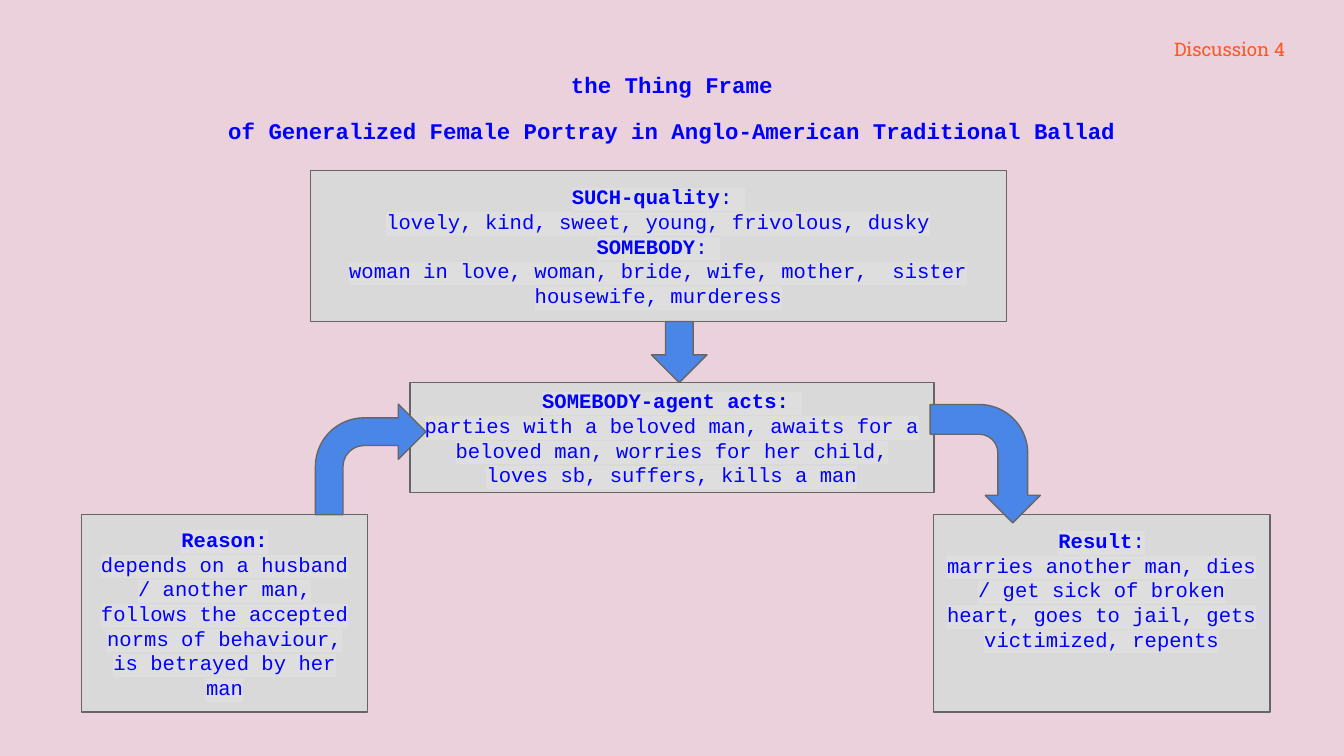
from lxml import etree
from pptx import Presentation
from pptx.dml.color import RGBColor
from pptx.enum.shapes import MSO_SHAPE
from pptx.enum.text import MSO_ANCHOR, MSO_AUTO_SIZE, PP_ALIGN
from pptx.oxml.ns import qn
from pptx.util import Pt

PINK = RGBColor(0xEA, 0xD1, 0xDC)
ORANGE = RGBColor(0xFF, 0x57, 0x22)
BLUE = RGBColor(0x00, 0x00, 0xFF)
BOX_GREY = RGBColor(0xD9, 0xD9, 0xD9)
TEXT_GREY = RGBColor(0xDE, 0xDE, 0xDE)
LINE_GREY = RGBColor(0x66, 0x66, 0x66)
ARROW_BLUE = RGBColor(0x4A, 0x86, 0xE8)

RECTANGLE = MSO_SHAPE.RECTANGLE
DOWN_ARROW = MSO_SHAPE.DOWN_ARROW
BENT_ARROW = MSO_SHAPE.BENT_ARROW
TOP, MIDDLE = MSO_ANCHOR.TOP, MSO_ANCHOR.MIDDLE
CENTER, RIGHT = PP_ALIGN.CENTER, PP_ALIGN.RIGHT
NO_AUTOFIT = MSO_AUTO_SIZE.NONE

INSET = 7.2

# Each box is left, top, width, height in points.
TITLE_BOX = (24.5, 13, 671, 26.6)
HEADING_BOX = (28, 31, 671, 356)
QUALITY_BOX = (166.3, 91.3, 372.8, 81)
AGENT_BOX = (219.6, 205, 280.8, 59)
REASON_BOX = (43.7, 275.7, 153.2, 105.7)
RESULT_BOX = (500.1, 275.7, 180.2, 105.7)
REASON_ARROW_BOX = (169, 216.5, 59.2, 59.2)
RESULT_ARROW_BOX = (496.1, 218.9, 63.4, 59)
DOWN_ARROW_WIDTH = 29.7

HEADING = [
    "the Thing Frame ",
    "of Generalized Female Portray in Anglo-American Traditional Ballad ",
]

# Each paragraph is a bold part followed by a plain part.
QUALITY = [
    ("SUCH-quality", ": "),
    ("", "lovely, kind, sweet, young, frivolous, dusky"),
    ("SOMEBODY", ": "),
    ("", "woman in love, woman, bride, wife, mother,  sister"),
    ("", "housewife, murderess"),
]
AGENT = [
    ("SOMEBODY-agent acts: ", ""),
    ("", "parties with a beloved man, awaits for a beloved man, "
         "worries for her child, loves sb, suffers, kills a man"),
]
REASON = [
    ("Reason:", ""),
    ("", "depends on a husband / another man,"),
    ("", "follows the accepted norms of behaviour, is betrayed by her man"),
]
RESULT = [
    ("Result", ":"),
    ("", "marries another man, dies / get sick of broken heart, "
         "goes to jail, gets victimized, repents"),
]


def format_span(span, size, name, colour, bold=False, highlight=None):
    span.font.size = Pt(size)
    span.font.name = name
    span.font.bold = bold
    span.font.color.rgb = colour
    if highlight is not None:
        fill = span.font._element.find(qn("a:solidFill"))
        mark = etree.Element(qn("a:highlight"))
        etree.SubElement(mark, qn("a:srgbClr")).set("val", str(highlight))
        fill.addnext(mark)


def prepare_frame(shape, anchor):
    frame = shape.text_frame
    frame.word_wrap = True
    frame.auto_size = NO_AUTOFIT
    frame.vertical_anchor = anchor
    frame.margin_left = frame.margin_right = Pt(INSET)
    frame.margin_top = frame.margin_bottom = Pt(INSET)
    return frame


def place(shape, box):
    shape.left, shape.top, shape.width, shape.height = map(Pt, box)


def remove_bullet(para):
    properties = para._p.get_or_add_pPr()
    properties.set("marL", "0")
    properties.set("indent", "0")
    etree.SubElement(properties, qn("a:buNone"))


def fill_title(title, box):
    place(title, box)
    frame = prepare_frame(title, TOP)
    frame.text = "Discussion 4"
    para = frame.paragraphs[0]
    para.alignment = RIGHT
    format_span(para.runs[0], 10, "Roboto Slab", ORANGE)


def fill_heading(body, box):
    place(body, box)
    frame = prepare_frame(body, TOP)
    frame.text = "\n".join(HEADING)
    for para in frame.paragraphs:
        para.alignment = CENTER
        para.space_before = Pt(0)
        para.space_after = Pt(10)
        remove_bullet(para)
        format_span(para.runs[0], 12, "Courier New", BLUE, True, PINK)


def add_outlined_shape(page, kind, box, colour):
    shape = page.shapes.add_shape(kind, *map(Pt, box))
    shape.shadow.inherit = False
    shape.fill.solid()
    shape.fill.fore_color.rgb = colour
    shape.line.color.rgb = LINE_GREY
    shape.line.width = Pt(0.75)
    return shape


def add_frame_box(page, box, paragraphs, anchor=MIDDLE):
    shape = add_outlined_shape(page, RECTANGLE, box, BOX_GREY)
    frame = prepare_frame(shape, anchor)
    for index, parts in enumerate(paragraphs):
        para = frame.add_paragraph() if index else frame.paragraphs[0]
        para.alignment = CENTER
        for text, bold in zip(parts, (True, False)):
            if text:
                span = para.add_run()
                span.text = text
                format_span(span, 11, "Courier New", BLUE, bold, TEXT_GREY)


def add_arrow(page, kind, box, adjustments, rotation=0):
    arrow = add_outlined_shape(page, kind, box, ARROW_BLUE)
    arrow.rotation = rotation
    for index, value in enumerate(adjustments):
        arrow.adjustments[index] = value


def add_down_arrow(page, upper, lower):
    """Fill the gap between two boxes, centred near the upper one."""
    left, top, width, height = upper
    bottom = top + height
    center = (left + width / 2 + lower[0] + lower[2] / 2) / 2 + 7.6
    box = (center - DOWN_ARROW_WIDTH / 2, bottom,
           DOWN_ARROW_WIDTH, lower[1] - bottom)
    add_arrow(page, DOWN_ARROW, box, (0.5, 0.5))


def build_frame_page(deck):
    page = deck.slides.add_slide(deck.slide_layouts[1])
    page.background.fill.solid()
    page.background.fill.fore_color.rgb = PINK
    fill_title(page.shapes.title, TITLE_BOX)
    fill_heading(page.placeholders[1], HEADING_BOX)
    add_frame_box(page, QUALITY_BOX, QUALITY)
    add_frame_box(page, AGENT_BOX, AGENT)
    add_frame_box(page, REASON_BOX, REASON)
    add_frame_box(page, RESULT_BOX, RESULT, TOP)
    add_down_arrow(page, QUALITY_BOX, AGENT_BOX)
    add_arrow(page, BENT_ARROW, REASON_ARROW_BOX, (0.25, 0.25, 0.25, 0.44))
    add_arrow(page, BENT_ARROW, RESULT_ARROW_BOX, (0.27, 0.25, 0.25, 0.44), 90)


def main():
    deck = Presentation()
    deck.slide_width, deck.slide_height = Pt(720), Pt(405)
    build_frame_page(deck)
    deck.save("out.pptx")


if __name__ == "__main__":
    main()
